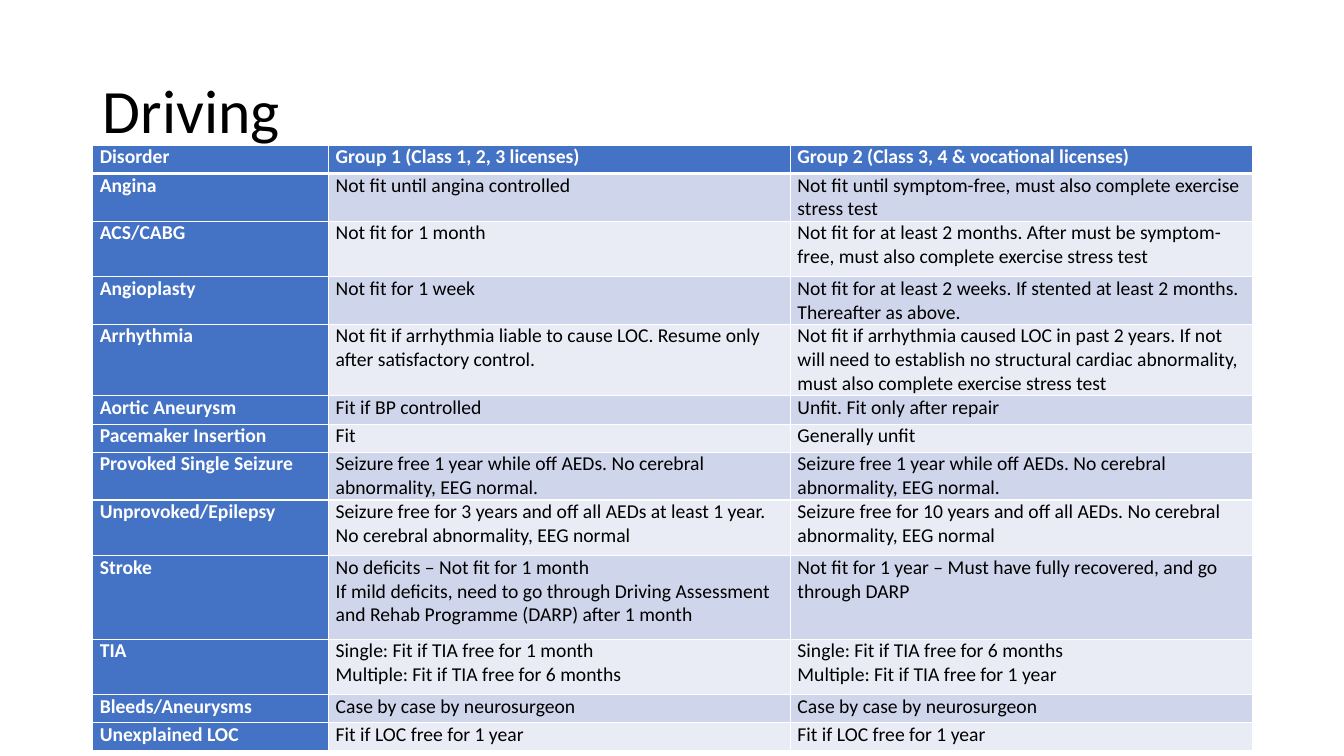
"""Build a slide with a table of fitness-to-drive rules by disorder."""
from lxml import etree
from pptx import Presentation
from pptx.dml.color import RGBColor
from pptx.enum import text
from pptx.oxml import ns
from pptx.util import Inches, Pt

WHITE = RGBColor(0xFF, 0xFF, 0xFF)
BLACK = RGBColor(0x00, 0x00, 0x00)
BLUE = RGBColor(0x44, 0x72, 0xC4)
BAND_DARK = RGBColor(0xCF, 0xD5, 0xEA)
BAND_LIGHT = RGBColor(0xE9, 0xEB, 0xF5)
FONT = "Calibri"

COLUMN_WIDTHS = [2.34, 4.58, 4.58]
ROW_HEIGHTS = {1: 0.28, 2: 0.55, 3: 0.83}
SEIZURE_FREE = "Seizure free 1 year while off AEDs. No cerebral abnormality, EEG normal."

RULES = [
    (1, "Disorder", "Group 1 (Class 1, 2, 3 licenses)",
     "Group 2 (Class 3, 4 & vocational licenses)"),
    (1, "Angina", "Not fit until angina controlled",
     "Not fit until symptom-free, must also complete exercise stress test"),
    (2, "ACS/CABG", "Not fit for 1 month",
     "Not fit for at least 2 months. After must be symptom-free, "
     "must also complete exercise stress test"),
    (1, "Angioplasty", "Not fit for 1 week",
     "Not fit for at least 2 weeks. If stented at least 2 months. Thereafter as above."),
    (2, "Arrhythmia",
     "Not fit if arrhythmia liable to cause LOC. Resume only after satisfactory control.",
     "Not fit if arrhythmia caused LOC in past 2 years. If not will need to establish "
     "no structural cardiac abnormality, must also complete exercise stress test"),
    (1, "Aortic Aneurysm", "Fit if BP controlled", "Unfit. Fit only after repair"),
    (1, "Pacemaker Insertion", "Fit", "Generally unfit"),
    (1, "Provoked Single Seizure", SEIZURE_FREE, SEIZURE_FREE),
    (2, "Unprovoked/Epilepsy",
     "Seizure free for 3 years and off all AEDs at least 1 year. "
     "No cerebral abnormality, EEG normal",
     "Seizure free for 10 years and off all AEDs. No cerebral abnormality, EEG normal"),
    (3, "Stroke",
     "No deficits – Not fit for 1 month\n"
     "If mild deficits, need to go through Driving Assessment "
     "and Rehab Programme (DARP) after 1 month",
     "Not fit for 1 year – Must have fully recovered, and go through DARP"),
    (2, "TIA",
     "Single: Fit if TIA free for 1 month\nMultiple: Fit if TIA free for 6 months",
     "Single: Fit if TIA free for 6 months\nMultiple: Fit if TIA free for 1 year"),
    (1, "Bleeds/Aneurysms", "Case by case by neurosurgeon", "Case by case by neurosurgeon"),
    (1, "Unexplained LOC", "Fit if LOC free for 1 year", "Fit if LOC free for 1 year"),
]


def add_borders(cell, top, bottom):
    """Draw white borders of the given top and bottom widths in points."""
    properties = cell._tc.get_or_add_tcPr()
    for side, width in (("L", 1), ("R", 1), ("T", top), ("B", bottom)):
        line = etree.SubElement(properties, ns.qn(f"a:ln{side}"), w=str(Pt(width)))
        fill = etree.SubElement(line, ns.qn("a:solidFill"))
        etree.SubElement(fill, ns.qn("a:srgbClr"), val=str(WHITE))


def format_text(paragraph, size, color, bold):
    """Set the font of every run in a paragraph."""
    for run in paragraph.runs:
        run.font.name = FONT
        run.font.size = Pt(size)
        run.font.color.rgb = color
        run.font.bold = bold


presentation = Presentation()
presentation.slide_width = Inches(13.33)
presentation.slide_height = Inches(7.5)
slide = presentation.slides.add_slide(presentation.slide_layouts[5])

title = slide.shapes.title
title.left, title.top = Inches(0.92), Inches(0.4)
title.width, title.height = Inches(11.5), Inches(1.45)
title.text_frame.text = "Driving"
title.text_frame.vertical_anchor = text.MSO_ANCHOR.MIDDLE
heading = title.text_frame.paragraphs[0]
heading.alignment = text.PP_ALIGN.LEFT
heading.line_spacing = 0.9
format_text(heading, 44, BLACK, False)

heights = [ROW_HEIGHTS[lines] for lines, *_ in RULES]
driving_rules = slide.shapes.add_table(
    len(RULES), len(COLUMN_WIDTHS), Inches(0.92), Inches(1.44),
    Inches(sum(COLUMN_WIDTHS)), Inches(sum(heights))).table
for column, width in zip(driving_rules.columns, COLUMN_WIDTHS):
    column.width = Inches(width)

for row, (lines, *entries) in enumerate(RULES):
    driving_rules.rows[row].height = Inches(heights[row])
    band = BAND_DARK if row % 2 else BAND_LIGHT
    for column, entry in enumerate(entries):
        is_header = row == 0 or column == 0
        cell = driving_rules.cell(row, column)
        cell.margin_left = cell.margin_right = Inches(0.07)
        cell.margin_top = cell.margin_bottom = 0
        add_borders(cell, 3 if row == 1 else 1, 3 if row == 0 else 1)
        cell.fill.solid()
        cell.fill.fore_color.rgb = BLUE if is_header else band
        cell.text_frame.text = entry
        for paragraph in cell.text_frame.paragraphs:
            format_text(paragraph, 14, WHITE if is_header else BLACK, is_header)

presentation.save("out.pptx")
